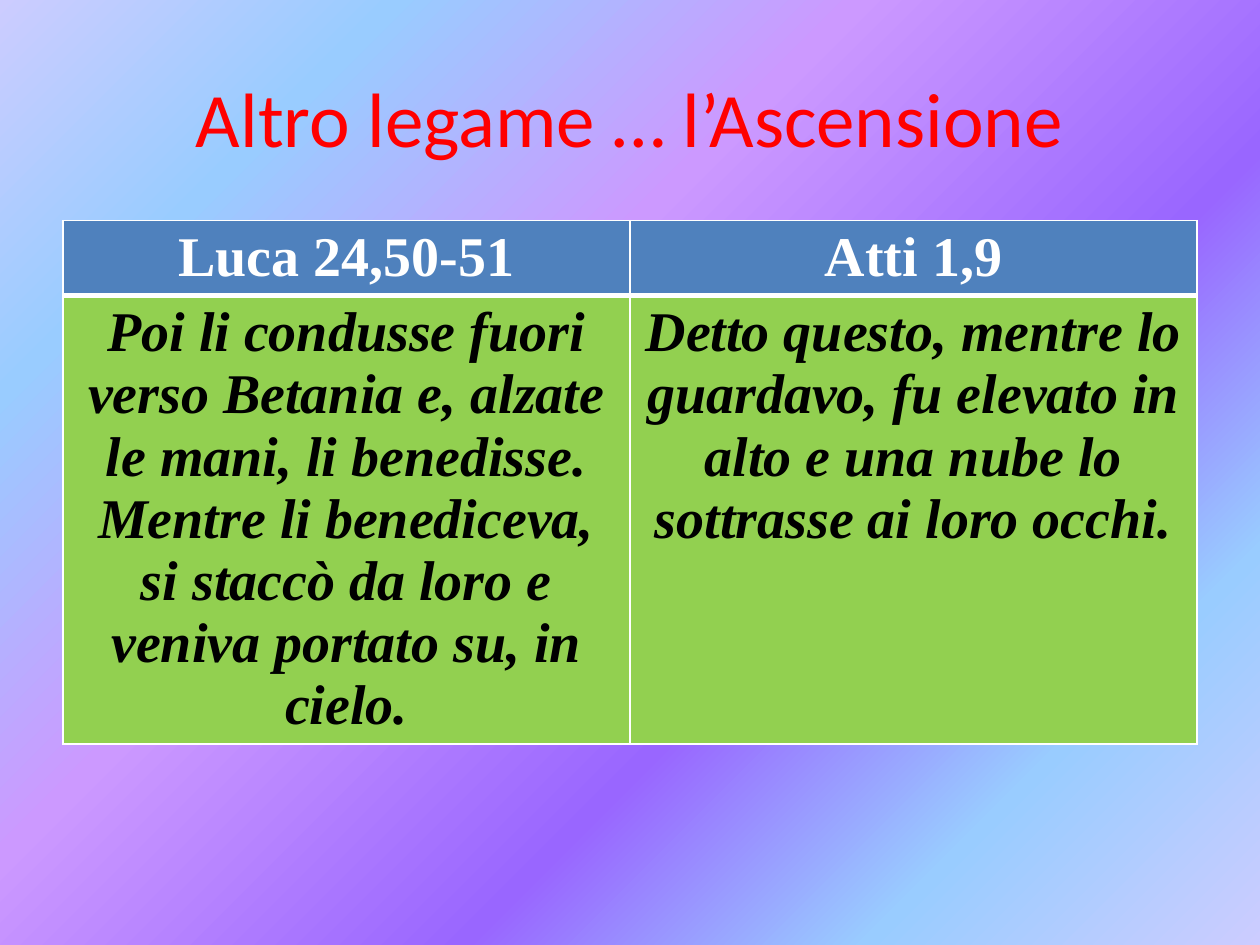
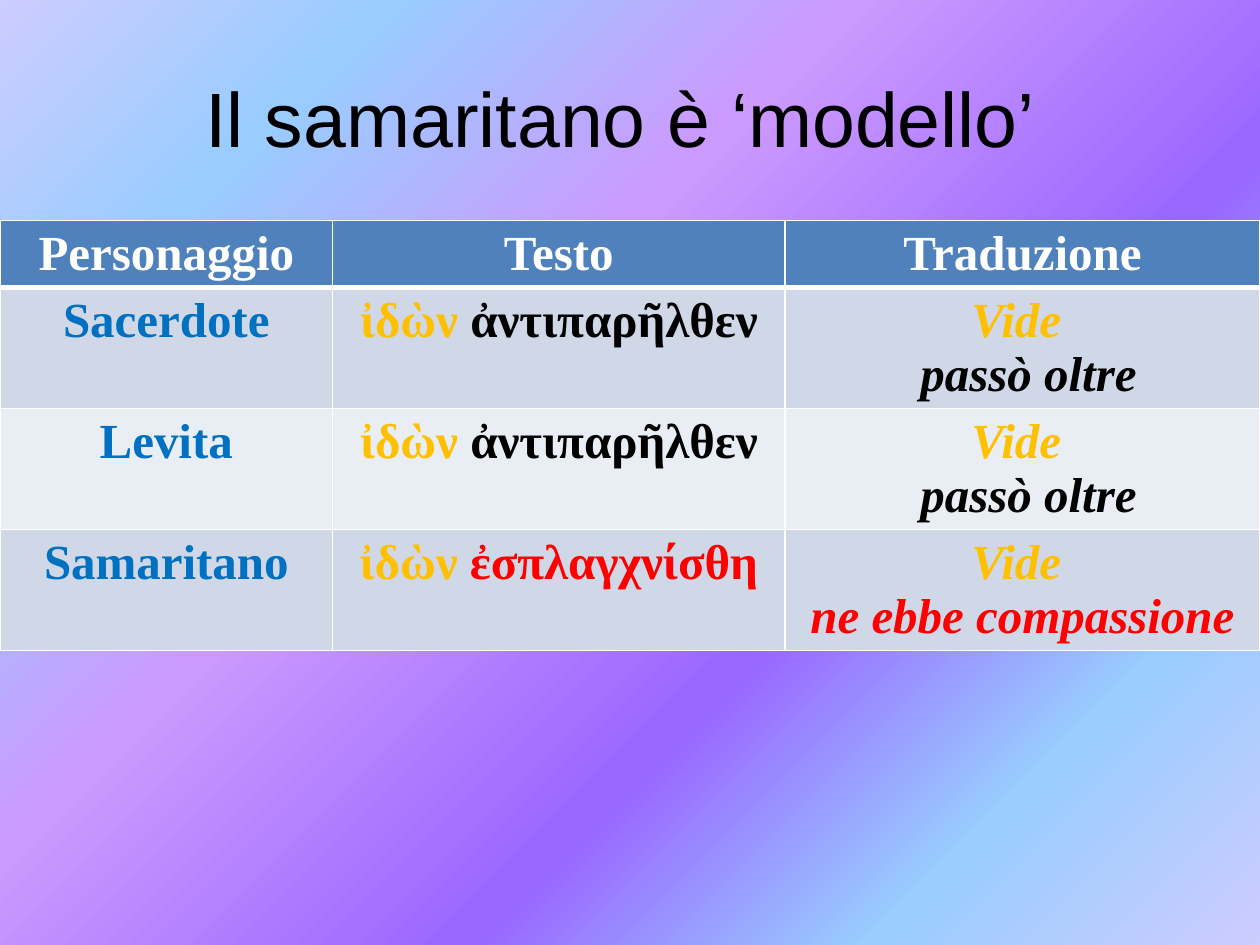
from pptx import Presentation
from pptx.dml.color import RGBColor
from pptx.enum.text import MSO_ANCHOR, PP_ALIGN
from pptx.oxml import parse_xml
from pptx.oxml.ns import nsdecls
from pptx.util import Inches, Pt

CENTER = PP_ALIGN.CENTER
MIDDLE = MSO_ANCHOR.MIDDLE

# Shared look
WIDTH, HEIGHT = Inches(10), Inches(7.5)
MARGIN = 0.05  # share of the slide width
TABLE_TOP = Inches(1.75)
TABLE_FONT = "Times New Roman"
THIN, THICK = Pt(1), Pt(3)

WHITE = RGBColor(0xFF, 0xFF, 0xFF)
BLACK = RGBColor(0, 0, 0)
RED = RGBColor(0xFF, 0, 0)
GOLD = RGBColor(0xFF, 0xC0, 0)
BLUE = RGBColor(0, 0x70, 0xC0)
HEADER_BLUE = RGBColor(0x4F, 0x81, 0xBD)
GREEN = RGBColor(0x92, 0xD0, 0x50)
BAND_DARK = RGBColor(0xD0, 0xD8, 0xE8)
BAND_LIGHT = RGBColor(0xE9, 0xED, 0xF4)

LILAC = RGBColor(0xCC, 0xCC, 0xFF)
SKY = RGBColor(0x99, 0xCC, 0xFF)
VIOLET = RGBColor(0x99, 0x66, 0xFF)
ORCHID = RGBColor(0xCC, 0x99, 0xFF)
BACKGROUND_STOPS = [(0, LILAC), (18, SKY), (36, VIOLET),
                    (61, ORCHID), (82, SKY), (100, LILAC)]


def set_background(master):
    """Give every slide the gradient that starts in the bottom right corner."""
    master.background.fill.solid()
    stops = "".join(
        f'<a:gs pos="{share * 1000}"><a:srgbClr val="{color}"/></a:gs>'
        for share, color in BACKGROUND_STOPS)
    gradient = parse_xml(
        f'<a:gradFill {nsdecls("a")} rotWithShape="0"><a:gsLst>{stops}</a:gsLst>'
        '<a:path path="circle"><a:fillToRect l="100000" t="100000"/></a:path>'
        '</a:gradFill>')
    properties = master.element.cSld.bg.bgPr
    properties.replace(properties[0], gradient)


def format_run(run, font, size, color, bold=False, italic=False):
    run.font.name = font
    run.font.size = Pt(size)
    run.font.color.rgb = color
    run.font.bold = bold
    run.font.italic = italic


def add_titled_slide(prs, text, font, color):
    slide = prs.slides.add_slide(prs.slide_layouts[5])
    title = slide.shapes.title
    title.left, title.top = int(WIDTH * MARGIN), int(HEIGHT * 0.04)
    title.width, title.height = int(WIDTH * (1 - 2 * MARGIN)), Inches(1.25)
    title.text_frame.text = text
    title.text_frame.vertical_anchor = MIDDLE
    heading = title.text_frame.paragraphs[0]
    heading.alignment = CENTER
    format_run(heading.runs[0], font, 44, color)
    return slide


def set_borders(cell, top, bottom):
    sides = {"L": THIN, "R": THIN, "T": top, "B": bottom}
    properties = cell._tc.get_or_add_tcPr()
    for index, (side, width) in enumerate(sides.items()):
        properties.insert(index, parse_xml(
            f'<a:ln{side} {nsdecls("a")} w="{width}"><a:solidFill>'
            f'<a:srgbClr val="{WHITE}"/></a:solidFill></a:ln{side}>'))


def fill_cell(cell, paragraphs, size, fill, italic=False):
    """Write paragraphs, each a list of (text, colour) pieces."""
    cell.fill.solid()
    cell.fill.fore_color.rgb = fill
    frame = cell.text_frame
    for index, pieces in enumerate(paragraphs):
        paragraph = frame.add_paragraph() if index else frame.paragraphs[0]
        paragraph.alignment = CENTER
        for text, color in pieces:
            run = paragraph.add_run()
            run.text = text
            format_run(run, TABLE_FONT, size, color, True, italic)


def add_comparison(slide, left, widths, heights, headers, rows, bands, size, italic_columns):
    """Add a table with a header row and body rows in alternating bands."""
    grid = slide.shapes.add_table(
        len(rows) + 1, len(headers), left, TABLE_TOP,
        Inches(sum(widths)), Inches(sum(heights))).table
    for column, width in zip(grid.columns, widths):
        column.width = Inches(width)
    for row, height in zip(grid.rows, heights):
        row.height = Inches(height)

    for c, header in enumerate(headers):
        cell = grid.cell(0, c)
        fill_cell(cell, [[(header, WHITE)]], size, HEADER_BLUE)
        set_borders(cell, THIN, THICK)
    for r, row in enumerate(rows, start=1):
        for c, paragraphs in enumerate(row):
            cell = grid.cell(r, c)
            fill_cell(cell, paragraphs, size, bands[(r - 1) % len(bands)],
                      c in italic_columns)
            set_borders(cell, THICK if r == 1 else THIN, THIN)


def character_row(name, greek, translation, color):
    """One character of the parable: he sees, and then he acts."""
    return [[[(name, BLUE)]],
            [[("ἰδὼν ", GOLD), (greek, color)]],
            [[("Vide ", GOLD)], [(translation, color)]]]


def main():
    prs = Presentation()
    prs.slide_width, prs.slide_height = WIDTH, HEIGHT
    set_background(prs.slide_master)

    # The Ascension in Luke and Acts
    ascension = add_titled_slide(prs, "Altro legame … l’Ascensione", "Calibri", RED)
    luke = ("Poi li condusse fuori verso Betania e, alzate le mani, li benedisse. "
            "Mentre li benediceva, si staccò da loro e veniva portato su, in cielo.")
    acts = ("Detto questo, mentre lo guardavo, fu elevato in alto e una nube "
            "lo sottrasse ai loro occhi.")
    add_comparison(ascension, int(WIDTH * MARGIN), [4.5, 4.5], [0.59, 3.56],
                   ["Luca 24,50-51", "Atti 1,9"],
                   [[[[(luke, BLACK)]], [[(acts, BLACK)]]]],
                   [GREEN], 32, {0, 1})

    # The Samaritan as a model
    samaritan = add_titled_slide(prs, "Il samaritano è ‘modello’ ", "Arial", BLACK)
    passed_by = ("ἀντιπαρῆλθεν", " passò oltre", BLACK)
    characters = [
        character_row("Sacerdote", *passed_by),
        character_row("Levita", *passed_by),
        character_row("Samaritano", "ἐσπλαγχνίσθη", "ne ebbe compassione", RED),
    ]
    add_comparison(samaritan, 0, [2.64, 3.59, 3.77], [0.53] + [0.96] * len(characters),
                   ["Personaggio", "Testo", "Traduzione"], characters,
                   [BAND_DARK, BAND_LIGHT], 28, {2})

    prs.save("out.pptx")


if __name__ == "__main__":
    main()
